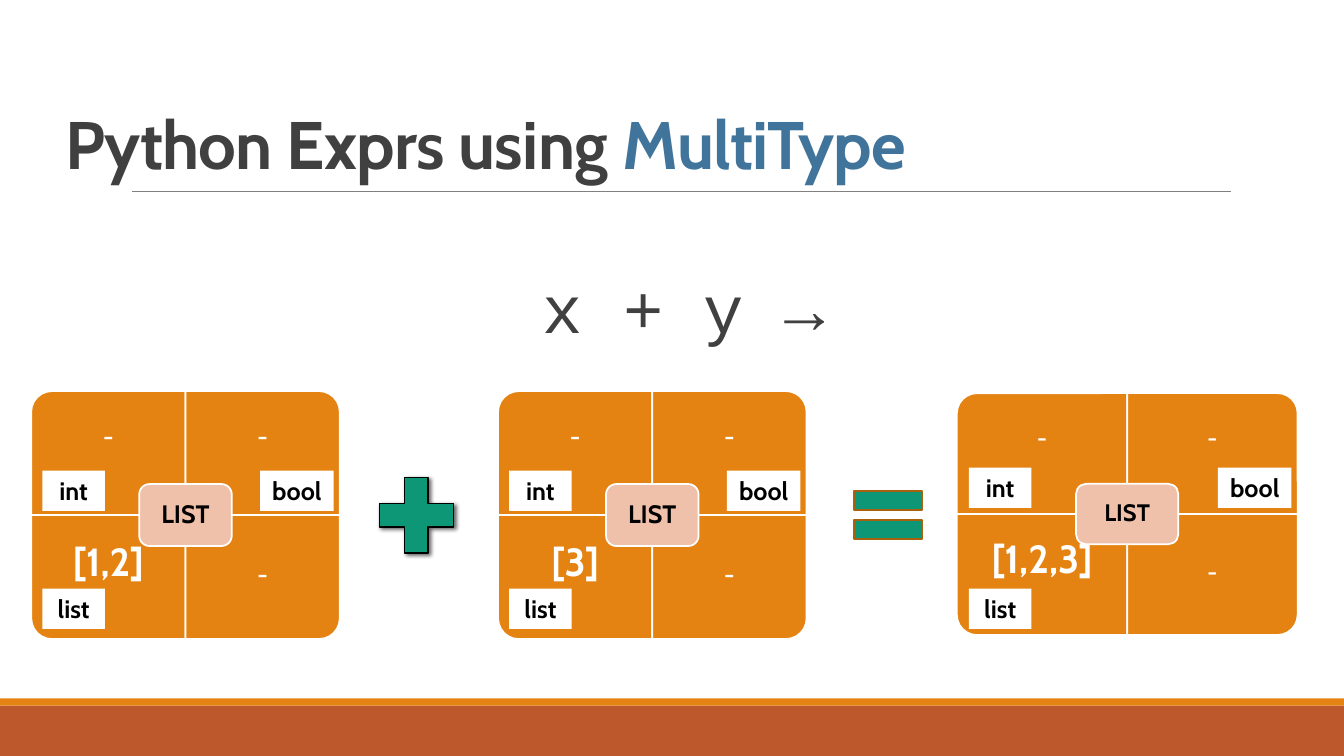
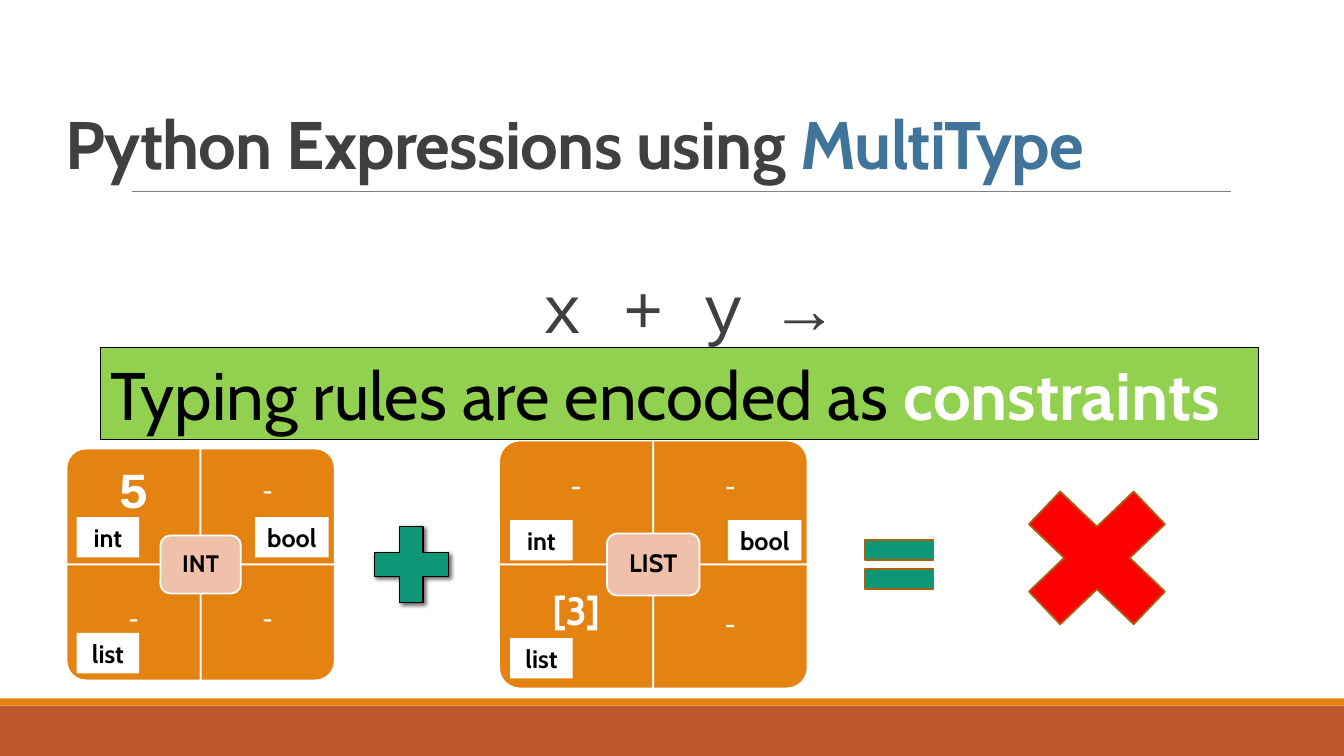
from dataclasses import dataclass

from lxml import etree
from pptx import Presentation
from pptx.dml.color import RGBColor
from pptx.enum.shapes import MSO_CONNECTOR, MSO_SHAPE
from pptx.enum.text import MSO_ANCHOR, MSO_AUTO_SIZE, PP_ALIGN
from pptx.oxml.ns import qn
from pptx.util import Inches, Pt

RUST = RGBColor(0xBD, 0x58, 0x2C)
ORANGE = RGBColor(0xE4, 0x83, 0x12)
BROWN = RGBColor(0xA9, 0x61, 0x0D)
PINK = RGBColor(0xEF, 0xC1, 0xAB)
TEAL = RGBColor(0x0D, 0x97, 0x76)
BLUE = RGBColor(0x40, 0x74, 0x9B)
GREEN = RGBColor(0x92, 0xD0, 0x50)
RED = RGBColor(0xFF, 0x00, 0x00)
GRAY = RGBColor(0x80, 0x80, 0x80)
DARK = RGBColor(0x40, 0x40, 0x40)
BLACK = RGBColor(0x00, 0x00, 0x00)
WHITE = RGBColor(0xFF, 0xFF, 0xFF)

RECTANGLE = MSO_SHAPE.RECTANGLE
ROUNDED = MSO_SHAPE.ROUNDED_RECTANGLE
ONE_ROUND_CORNER = MSO_SHAPE.ROUND_1_RECTANGLE
PLUS = MSO_SHAPE.MATH_PLUS
EQUAL = MSO_SHAPE.MATH_EQUAL
MULTIPLY = MSO_SHAPE.MATH_MULTIPLY
STRAIGHT = MSO_CONNECTOR.STRAIGHT
LEFT, CENTER = PP_ALIGN.LEFT, PP_ALIGN.CENTER
TOP, MIDDLE, BOTTOM = MSO_ANCHOR.TOP, MSO_ANCHOR.MIDDLE, MSO_ANCHOR.BOTTOM

MAIN_FONT = "Cabin"
CODE_FONT = "Courier New"
TITLE_ONLY = 5
QUADRANTS = ((0, 0, 270), (1, 0, 0), (0, 1, 180), (1, 1, 90))


@dataclass
class Card:
    """Position, cell size and content of one MultiType card."""
    left: float
    top: float
    values: tuple
    tag: str = "LIST"
    cell_width: float = 1.53
    cell_height: float = 1.23
    size: int = 18
    label_inset: float = 0.11
    middle_gap: float = 0.04
    bottom_gap: float = 0.1


def write_text(shape, *runs, size=18, font=MAIN_FONT, color=BLACK, bold=True,
               align=CENTER, anchor=MIDDLE, inset=0, tracking=None, spacing=None):
    """Write one paragraph; a run is a string or (string, overrides)."""
    frame = shape.text_frame
    frame.word_wrap = True
    frame.auto_size = MSO_AUTO_SIZE.NONE
    frame.vertical_anchor = anchor
    frame.margin_left = frame.margin_right = Inches(inset)
    frame.margin_top = frame.margin_bottom = Inches(inset / 2)
    paragraph = frame.paragraphs[0]
    paragraph.alignment = align
    if spacing:
        paragraph.line_spacing = spacing
    for item in runs:
        text, overrides = (item, {}) if isinstance(item, str) else item
        run = paragraph.add_run()
        run.text = text
        run.font.name = font
        run.font.size = Pt(size)
        run.font.bold = overrides.get("bold", bold)
        run.font.color.rgb = overrides.get("color", color)
        if tracking:
            run.font._element.set("spc", str(int(tracking * 100)))


def add_shape(shapes, kind, left, top, width, height, fill, line=None, line_width=1.25):
    """Add a filled preset shape without shadow."""
    shape = shapes.add_shape(kind, Inches(left), Inches(top), Inches(width), Inches(height))
    shape.shadow.inherit = False
    shape.fill.solid()
    shape.fill.fore_color.rgb = fill
    if line is None:
        shape.line.fill.background()
    else:
        shape.line.color.rgb = line
        shape.line.width = Pt(line_width)
    return shape


def add_text(shapes, text, left, top, width, height, **style):
    """Add a text box."""
    box = shapes.add_textbox(Inches(left), Inches(top), Inches(width), Inches(height))
    write_text(box, text, **style)


def add_shadow(shape):
    """Give a shape a soft shadow to the lower right."""
    effects = shape.element.spPr.find(qn("a:effectLst"))
    shadow = etree.SubElement(effects, qn("a:outerShdw"), blurRad=str(Pt(3)),
                              dist=str(Pt(2)), dir="2700000", rotWithShape="0")
    color = etree.SubElement(shadow, qn("a:srgbClr"), val=str(BLACK))
    etree.SubElement(color, qn("a:alpha"), val="60000")


def decorate_layout(layout, slide):
    """Draw the footer bands and title rule and move them to the layout."""
    rule = slide.shapes.add_connector(STRAIGHT, Inches(1.31), Inches(1.9),
                                      Inches(12.21), Inches(1.9))
    rule.line.color.rgb = GRAY
    rule.line.width = Pt(0.5)
    etree.SubElement(rule.element.spPr, qn("a:effectLst"))
    parts = (add_shape(slide.shapes, RECTANGLE, 0, 7, 13.33, 0.5, RUST),
             add_shape(slide.shapes, RECTANGLE, 0, 6.93, 13.33, 0.07, ORANGE), rule)
    for part in parts:
        layout.shapes.element.append(part.element)


def add_title(slide, text):
    """Place the title, which ends in the highlighted type name."""
    title = slide.shapes.title
    title.left, title.top = Inches(0.55), Inches(0.28)
    title.width, title.height = Inches(12.39), Inches(1.59)
    write_text(title, text, ("MultiType", {"color": BLUE}), size=48, color=DARK,
               align=LEFT, anchor=BOTTOM, inset=0.1, tracking=-0.5, spacing=0.85)


def add_formula(slide):
    """Place the expression under the title."""
    add_text(slide.shapes, "x + y →", 2.23, 2.64, 9.1, 0.8, size=48, font=CODE_FONT,
             color=DARK, bold=False, anchor=TOP)


def add_quadrant(shapes, card, column, row, rotation, value):
    """Draw one cell with its rounded corner outward, and its value."""
    width, height = card.cell_width, card.cell_height
    left, top = card.left + column * width, card.top + row * height
    shape_width, shape_height = (height, width) if rotation % 180 else (width, height)
    cell = add_shape(shapes, ONE_ROUND_CORNER, left + (width - shape_width) / 2,
                     top + (height - shape_height) / 2, shape_width, shape_height,
                     ORANGE, WHITE)
    cell.rotation = rotation
    size, font, lift = card.size, MAIN_FONT, 0.17
    if value.startswith("["):
        size, lift = 28, 0.29
    elif value.isdigit():
        size, font = 36, CODE_FONT
    text_top = top + row * (height / 4 - lift)
    add_text(shapes, value, left, text_top, width, height * 0.75,
             size=size, font=font, color=WHITE, spacing=0.9)


def add_card(slide, card):
    """Draw a MultiType card: four cells, the active tag and the type labels."""
    shapes = slide.shapes.add_group_shape().shapes
    for (column, row, rotation), value in zip(QUADRANTS, card.values):
        add_quadrant(shapes, card, column, row, rotation, value)
    center_x, center_y = card.left + card.cell_width, card.top + card.cell_height
    tag_width, tag_height = card.cell_width * 0.6, card.cell_height * 0.5
    tag = add_shape(shapes, ROUNDED, center_x - tag_width / 2, center_y - tag_height / 2,
                    tag_width, tag_height, PINK, WHITE)
    write_text(tag, card.tag, size=card.size, spacing=0.9)
    label_left = card.left + card.label_inset
    upper = center_y - card.middle_gap - 0.4
    lower = center_y + card.cell_height - card.bottom_gap - 0.4
    bool_left = center_x + card.cell_width - 0.79
    for text, left, top, width in (("int", label_left, upper, 0.62),
                                   ("list", label_left, lower, 0.62),
                                   ("bool", bool_left, upper, 0.73)):
        write_text(add_shape(shapes, RECTANGLE, left, top, width, 0.4, WHITE), text)


def add_operators(slide, plus_left, equal_left, top):
    """Draw the plus and equals signs of the equation."""
    add_shadow(add_shape(slide.shapes, PLUS, plus_left, top, 1, 1.02, TEAL, BLACK, 1))
    add_shape(slide.shapes, EQUAL, equal_left, top + 0.1, 0.92, 0.82, TEAL, BROWN)


def add_banner(slide, left, top, width, height):
    """Draw the green statement bar."""
    banner = add_shape(slide.shapes, RECTANGLE, left, top, width, height, GREEN, BLACK, 0.75)
    write_text(banner, "Typing rules are encoded as ",
               ("constraints", {"color": WHITE, "bold": True}),
               size=48, bold=False, align=LEFT, inset=0.1)


def build_list_slide(slide):
    """Show two lists adding up to a list."""
    add_title(slide, "Python Exprs using ")
    add_operators(slide, 3.63, 8.35, 4.6)
    add_card(slide, Card(0.31, 3.88, ("-", "-", "[1,2]", "-")))
    add_card(slide, Card(4.94, 3.88, ("-", "-", "[3]", "-")))
    add_card(slide, Card(9.49, 3.9, ("-", "-", "[1,2,3]", "-"), cell_width=1.69,
                         cell_height=1.2, size=17, label_inset=0.12,
                         middle_gap=0.06, bottom_gap=0.06))
    add_formula(slide)


def build_constraint_slide(slide):
    """Show that an int and a list do not add up."""
    add_title(slide, "Python Expressions using ")
    add_card(slide, Card(4.95, 4.37, ("-", "-", "[3]", "-")))
    add_card(slide, Card(0.66, 4.45, ("5", "-", "-", "-"), tag="INT", cell_width=1.33,
                         cell_height=1.15, size=17, label_inset=0.1,
                         middle_gap=0.07, bottom_gap=0.07))
    add_operators(slide, 3.58, 8.46, 5.09)
    add_shape(slide.shapes, MULTIPLY, 9.88, 4.58, 2, 1.91, RED, BROWN)
    add_banner(slide, 1, 3.45, 11.48, 0.91)
    add_formula(slide)


def main():
    """Build and save the presentation."""
    presentation = Presentation()
    presentation.slide_width, presentation.slide_height = Inches(13.33), Inches(7.5)
    layout = presentation.slide_layouts[TITLE_ONLY]
    slides = [presentation.slides.add_slide(layout) for _ in range(2)]
    decorate_layout(layout, slides[0])
    build_list_slide(slides[0])
    build_constraint_slide(slides[1])
    presentation.save("out.pptx")


if __name__ == "__main__":
    main()
